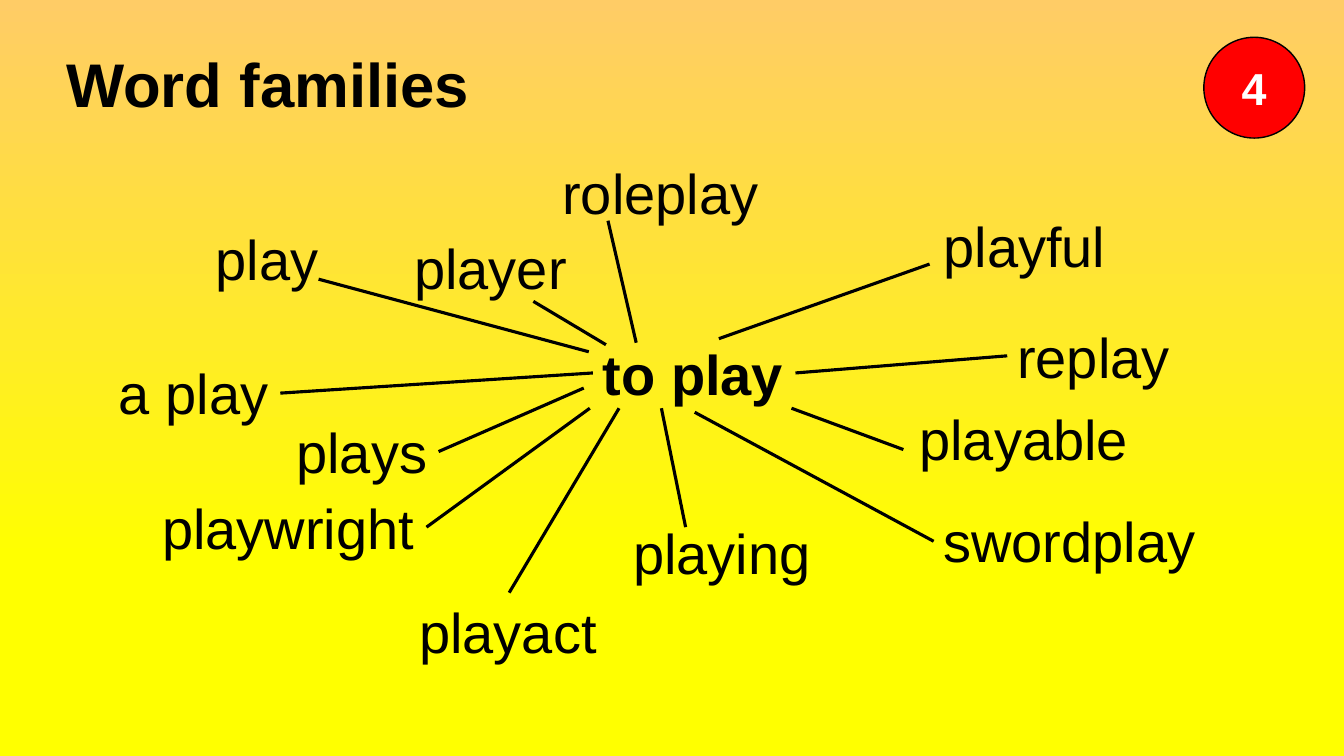
from copy import deepcopy
from dataclasses import dataclass

from pptx import Presentation
from pptx.dml.color import RGBColor
from pptx.enum.shapes import MSO_CONNECTOR, MSO_SHAPE
from pptx.enum.text import MSO_ANCHOR, MSO_AUTO_SIZE, PP_ALIGN
from pptx.oxml import parse_xml
from pptx.oxml.ns import nsdecls, qn
from pptx.slide import Slide
from pptx.text.text import TextFrame
from pptx.util import Emu, Pt

PX = 9144  # 100 px to the inch
FONT = "Arial"
WORD_HEIGHT = 77

BLACK = RGBColor(0x00, 0x00, 0x00)
WHITE = RGBColor(0xFF, 0xFF, 0xFF)
RED = RGBColor(0xFF, 0x00, 0x00)
ORANGE = RGBColor(0xFF, 0xCC, 0x66)
YELLOW = RGBColor(0xFF, 0xFF, 0x00)


@dataclass(frozen=True)
class Word:
    text: str
    left: int
    top: int
    width: int


@dataclass(frozen=True)
class Branch:
    word: Word
    start: tuple[int, int]
    end: tuple[int, int]


CENTRE = Word("to play", 588, 332, 201)
BRANCHES = [
    Branch(Word("roleplay", 548, 152, 217), (603, 219), (631, 340)),
    Branch(Word("player", 401, 227, 173), (601, 342), (529, 299)),
    Branch(Word("playful", 926, 205, 182), (713, 336), (922, 262)),
    Branch(Word("replay", 999, 315, 173), (789, 370), (999, 353)),
    Branch(Word("swordplay", 926, 498, 273), (689, 409), (926, 537)),
    Branch(Word("playable", 902, 396, 229), (785, 405), (896, 446)),
    Branch(Word("playing", 618, 509, 198), (656, 405), (680, 523)),
    Branch(Word("playact", 406, 588, 198), (505, 588), (614, 405)),
    Branch(Word("plays", 284, 409, 151), (435, 448), (579, 385)),
    Branch(Word("playwright", 151, 485, 273), (423, 523), (585, 405)),
    Branch(Word("a play", 108, 351, 170), (278, 390), (588, 370)),
    Branch(Word("play", 204, 218, 123), (316, 277), (584, 349)),
]


def px(*lengths: int) -> list[Emu]:
    return [Emu(length * PX) for length in lengths]


def write(frame: TextFrame, text: str, size: int, color: RGBColor, bold: bool) -> None:
    paragraph = frame.paragraphs[0]
    paragraph.text = text
    font = paragraph.font
    font.name, font.size, font.bold = FONT, Pt(size), bold
    font.color.rgb = color


def paint_background(slide: Slide) -> None:
    fill = slide.background.fill
    fill.gradient()
    fill.gradient_angle = 270
    first, second = fill.gradient_stops
    first.color.rgb, first.position = ORANGE, 0
    second.color.rgb, second.position = YELLOW, 0.74
    stop_list = slide.element.find(".//" + qn("a:gsLst"))
    for position in (83, 100):
        stop = deepcopy(stop_list[1])
        stop.set("pos", str(position * 1000))
        stop_list.append(stop)


def add_title(slide: Slide, text: str) -> None:
    frame = slide.shapes.add_textbox(*px(56, 14, 1150, 145)).text_frame
    frame.word_wrap = True
    frame.vertical_anchor = MSO_ANCHOR.MIDDLE
    write(frame, text, 44, BLACK, True)
    frame.paragraphs[0].line_spacing = 0.9


def add_word(slide: Slide, word: Word, bold: bool = False) -> None:
    box = slide.shapes.add_textbox(*px(word.left, word.top, word.width, WORD_HEIGHT))
    frame = box.text_frame
    frame.word_wrap = False
    frame.auto_size = MSO_AUTO_SIZE.SHAPE_TO_FIT_TEXT
    write(frame, word.text, 40, BLACK, bold)


def add_line(slide: Slide, branch: Branch) -> None:
    connector = slide.shapes.add_connector(
        MSO_CONNECTOR.STRAIGHT, *px(*branch.start, *branch.end))
    connector.line.color.rgb = BLACK
    connector.line.width = Pt(2.25)
    properties = connector.element.find(qn("p:spPr"))
    properties.append(parse_xml(f"<a:effectLst {nsdecls('a')}/>"))


def add_badge(slide: Slide, text: str) -> None:
    shape = slide.shapes.add_shape(MSO_SHAPE.OVAL, *px(1194, 37, 100, 100))
    shape.shadow.inherit = False
    shape.fill.solid()
    shape.fill.fore_color.rgb = RED
    shape.line.color.rgb = BLACK
    shape.line.width = Pt(1)
    shape.text_frame.vertical_anchor = MSO_ANCHOR.MIDDLE
    write(shape.text_frame, text, 32, WHITE, True)
    shape.text_frame.paragraphs[0].alignment = PP_ALIGN.CENTER


def main() -> None:
    presentation = Presentation()
    presentation.slide_width, presentation.slide_height = px(1333, 750)
    slide = presentation.slides.add_slide(presentation.slide_layouts[6])

    # Background and title
    paint_background(slide)
    add_title(slide, "Word families")

    # Word web: words first, then the lines to the centre
    for branch in BRANCHES:
        add_word(slide, branch.word)
    for branch in BRANCHES:
        add_line(slide, branch)
    add_word(slide, CENTRE, bold=True)

    # Numbered badge
    add_badge(slide, "4")

    presentation.save("out.pptx")


if __name__ == "__main__":
    main()
